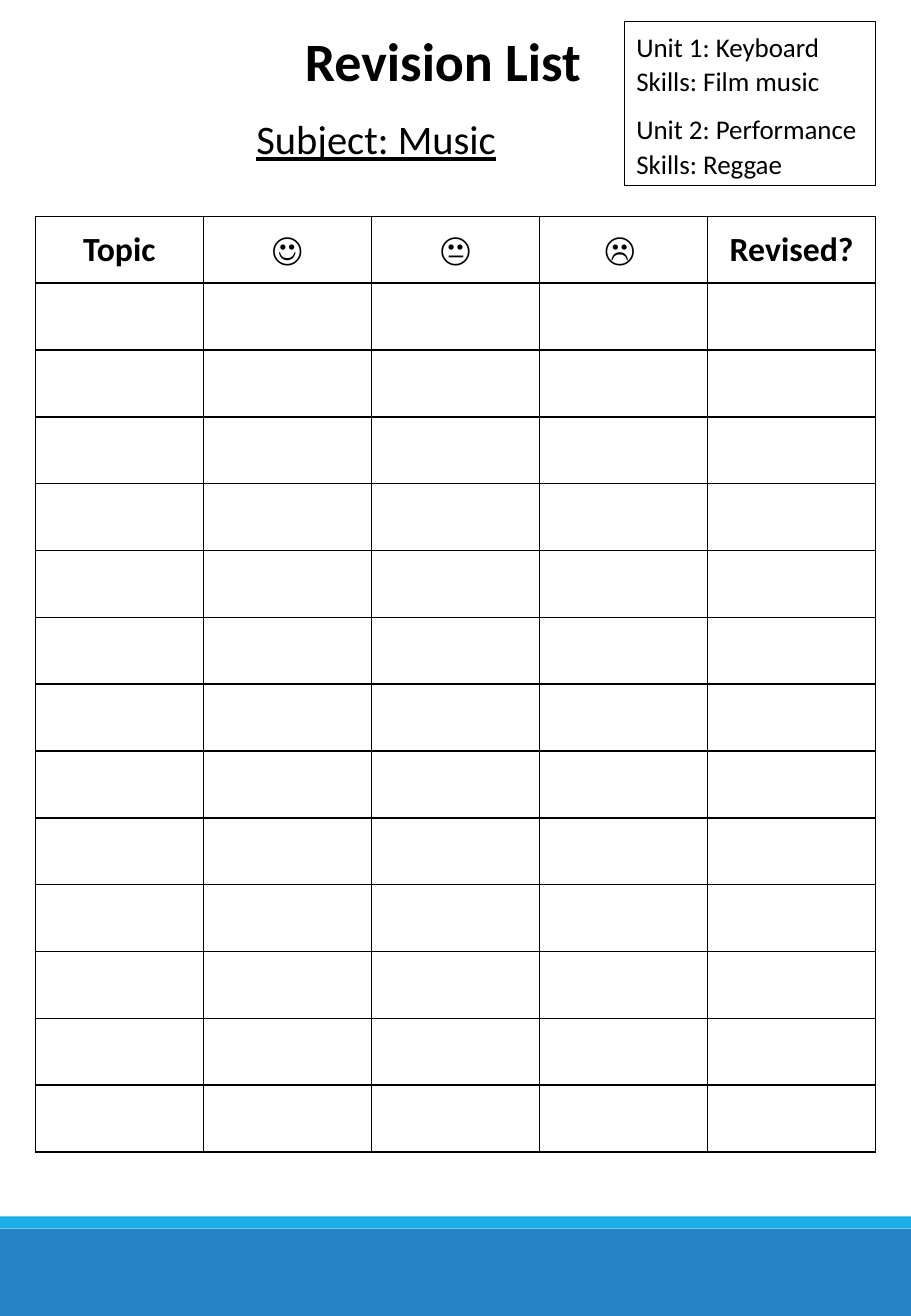
from lxml.etree import SubElement
from pptx import Presentation
from pptx.dml.color import RGBColor
from pptx.enum.shapes import MSO_SHAPE
from pptx.enum.text import MSO_ANCHOR, MSO_AUTO_SIZE, PP_ALIGN
from pptx.oxml.ns import qn
from pptx.util import Inches, Pt

TITLE = "Revision List"
SUBJECT = "Subject: Music"
UNITS = ["Unit 1: Keyboard Skills: Film music", "Unit 2: Performance Skills: Reggae"]
HEADINGS = ["Topic", "☺", "😐", "☹ ", "Revised?"]
TOPIC_ROWS = 13

COLOURS = {"ink": "000000", "band": "2683C6", "stripe": "1CADE4"}
FONT = "Calibri"
WIDTH, HEIGHT = 7.5, 10.83
MARGIN = 0.29
HEADER_TOP = 0.18
GRID_TOP = 1.78
ROW_HEIGHT = 0.55
BAND_HEIGHT, STRIPE_HEIGHT = 0.72, 0.1
UNITS_WIDTH, UNITS_HEIGHT = 2.07, 1.35

GRID_WIDTH = WIDTH - 2 * MARGIN
TITLE_BOX = (2.41, HEADER_TOP, 3.2, 0.64)
SUBJECT_BOX = (2.01, 0.89, 4.11, 0.5)
UNITS_BOX = (WIDTH - MARGIN - UNITS_WIDTH, HEADER_TOP, UNITS_WIDTH, UNITS_HEIGHT)
GRID_BOX = (MARGIN, GRID_TOP, GRID_WIDTH, ROW_HEIGHT * (TOPIC_ROWS + 1))
BAND_TOP = HEIGHT - BAND_HEIGHT
BANDS = {
    "band": (0, BAND_TOP, WIDTH, BAND_HEIGHT),
    "stripe": (0, BAND_TOP - STRIPE_HEIGHT, WIDTH, STRIPE_HEIGHT),
}

TITLE_FONT = {"size": Pt(32), "bold": True}
SUBJECT_FONT = {"size": Pt(24), "underline": True}
UNITS_FONT = {"size": Pt(16)}
HEADING_FONT = {"size": Pt(20), "bold": True}
HEADER_PARAGRAPH = {"alignment": PP_ALIGN.LEFT, "space_before": Pt(0), "line_spacing": 1.0}
UNITS_PARAGRAPH = {"alignment": PP_ALIGN.LEFT, "space_after": Pt(8), "line_spacing": 1.07}
HEADING_PARAGRAPH = {"alignment": PP_ALIGN.CENTER}


def apply(target, values):
    for name, value in values.items():
        setattr(target, name, value)


def inches(box):
    return [Inches(length) for length in box]


def write(frame, lines, font, paragraph_format):
    frame.text = "\n".join(lines)
    for paragraph in frame.paragraphs:
        apply(paragraph, paragraph_format)
        for run in paragraph.runs:
            apply(run.font, {"name": FONT, **font})
            run.font.color.rgb = RGBColor.from_string(COLOURS["ink"])


def add_rectangle(slide, box):
    rectangle = slide.shapes.add_shape(MSO_SHAPE.RECTANGLE, *inches(box))
    rectangle.shadow.inherit = False
    return rectangle


def add_bands(slide):
    for colour, box in BANDS.items():
        band = add_rectangle(slide, box)
        band.fill.solid()
        band.fill.fore_color.rgb = RGBColor.from_string(COLOURS[colour])
        band.line.fill.background()


def fill_placeholder(placeholder, box, text, font):
    apply(placeholder, dict(zip(("left", "top", "width", "height"), inches(box))))
    frame = placeholder.text_frame
    apply(frame, {"word_wrap": True, "vertical_anchor": MSO_ANCHOR.TOP,
                  "auto_size": MSO_AUTO_SIZE.SHAPE_TO_FIT_TEXT})
    write(frame, [text], font, HEADER_PARAGRAPH)


def add_units(slide):
    units = add_rectangle(slide, UNITS_BOX)
    units.fill.background()
    units.line.color.rgb = RGBColor.from_string(COLOURS["ink"])
    units.line.width = Pt(0.75)
    apply(units.text_frame, {"word_wrap": True, "vertical_anchor": MSO_ANCHOR.TOP,
                             "auto_size": MSO_AUTO_SIZE.SHAPE_TO_FIT_TEXT})
    write(units.text_frame, UNITS, UNITS_FONT, UNITS_PARAGRAPH)


def draw_borders(cell):
    properties = cell._tc.get_or_add_tcPr()
    for side in ("a:lnL", "a:lnR", "a:lnT", "a:lnB"):
        border = SubElement(properties, qn(side), w=str(Pt(1)))
        fill = SubElement(border, qn("a:solidFill"))
        SubElement(fill, qn("a:srgbClr"), val=COLOURS["ink"])


def add_checklist(slide):
    checklist = slide.shapes.add_table(TOPIC_ROWS + 1, len(HEADINGS), *inches(GRID_BOX)).table
    apply(checklist, {"first_row": False, "horz_banding": False})
    for column in checklist.columns:
        column.width = Inches(GRID_WIDTH / len(HEADINGS))
    for row in checklist.rows:
        row.height = Inches(ROW_HEIGHT)
    for cell in checklist.iter_cells():
        draw_borders(cell)
        cell.fill.background()
    for cell, heading in zip(checklist.rows[0].cells, HEADINGS):
        cell.vertical_anchor = MSO_ANCHOR.MIDDLE
        write(cell.text_frame, [heading], HEADING_FONT, HEADING_PARAGRAPH)


def main():
    deck = Presentation()
    apply(deck, {"slide_width": Inches(WIDTH), "slide_height": Inches(HEIGHT)})
    slide = deck.slides.add_slide(deck.slide_layouts[0])
    title, subject = slide.placeholders
    add_bands(slide)
    fill_placeholder(title, TITLE_BOX, TITLE, TITLE_FONT)
    fill_placeholder(subject, SUBJECT_BOX, SUBJECT, SUBJECT_FONT)
    add_checklist(slide)
    add_units(slide)
    deck.save("out.pptx")


if __name__ == "__main__":
    main()
